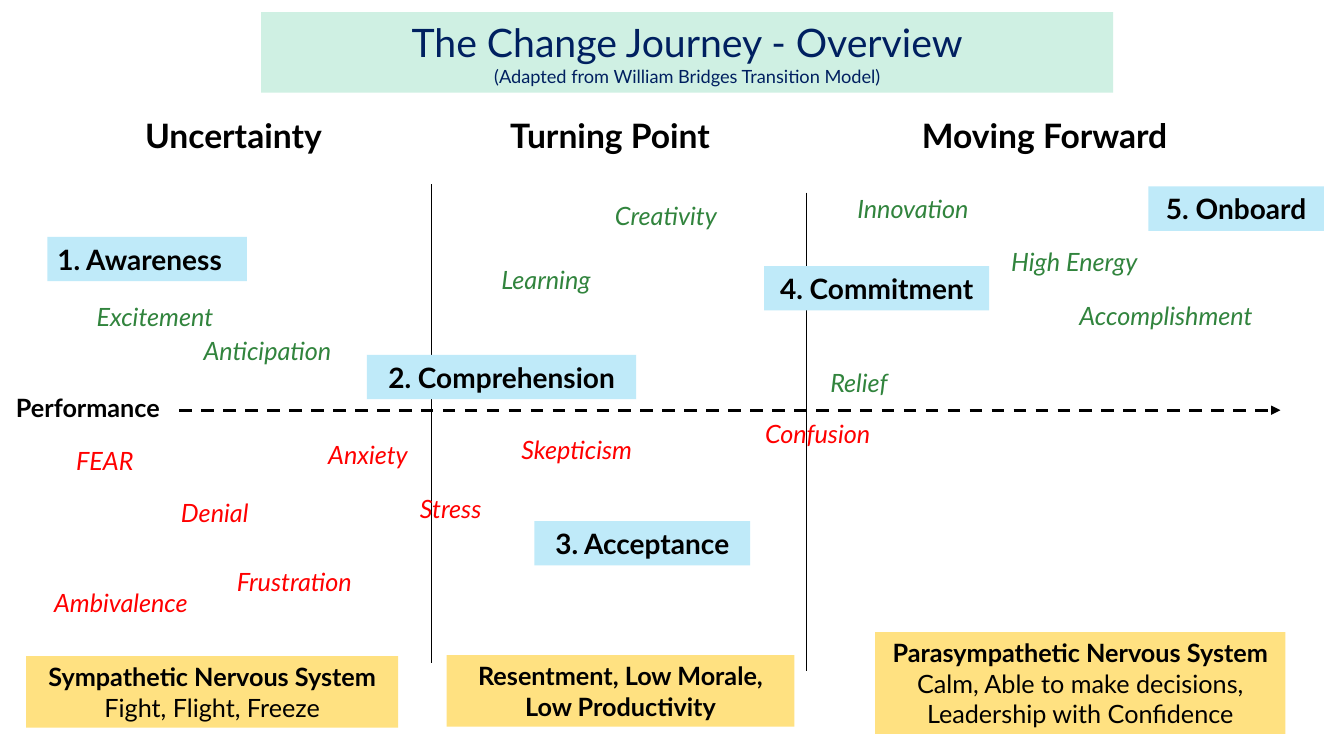
from lxml import etree
from pptx import Presentation
from pptx.dml.color import RGBColor
from pptx.enum.dml import MSO_LINE
from pptx.enum.shapes import MSO_CONNECTOR, MSO_SHAPE
from pptx.enum.text import MSO_ANCHOR, MSO_AUTO_SIZE, PP_ALIGN
from pptx.oxml.ns import qn
from pptx.util import Emu, Pt

PX = 9144  # 100 px to the inch
FONT = "Lato"
TITLE_ONLY = 5

BLACK = RGBColor(0x00, 0x00, 0x00)
NAVY = RGBColor(0x00, 0x20, 0x60)
GREEN = RGBColor(0x31, 0x84, 0x3D)
RED = RGBColor(0xFF, 0x00, 0x00)
MINT = RGBColor(0xCF, 0xF0, 0xE3)
SKY = RGBColor(0xBF, 0xEA, 0xF9)
YELLOW = RGBColor(0xFF, 0xE1, 0x81)

LEFT, CENTER = PP_ALIGN.LEFT, PP_ALIGN.CENTER
MIDDLE, TOP = MSO_ANCHOR.MIDDLE, MSO_ANCHOR.TOP
NO_AUTOFIT = MSO_AUTO_SIZE.NONE
RECTANGLE = MSO_SHAPE.RECTANGLE
STRAIGHT = MSO_CONNECTOR.STRAIGHT
DASH = MSO_LINE.DASH

HEADING = {"size": Pt(24), "bold": True}
STAGE = {"size": Pt(20), "bold": True}
STRONG = {"size": Pt(18), "bold": True}
PLAIN = {"size": Pt(18), "bold": False}
FEELING = {"size": Pt(18), "italic": True}


class SlideBuilder:
    def __init__(self, page):
        self.page = page

    def lengths(self, *values):
        return [Emu(value * PX) for value in values]

    def add_span(self, para, text, style, color):
        span = para.add_run()
        span.text = text
        for name, value in {"name": FONT, **style}.items():
            setattr(span.font, name, value)
        span.font.color.rgb = color

    def frame(self, box, anchor):
        settings = {"word_wrap": True, "auto_size": NO_AUTOFIT, "vertical_anchor": anchor}
        for name, value in settings.items():
            setattr(box.text_frame, name, value)
        return box.text_frame

    def title(self, bounds, heading, subheading):
        box = self.page.shapes.title
        box.left, box.top, box.width, box.height = self.lengths(*bounds)
        box.fill.solid()
        box.fill.fore_color.rgb = MINT
        para = self.frame(box, MIDDLE).paragraphs[0]
        para.alignment = CENTER
        self.add_span(para, heading, {"size": Pt(28)}, NAVY)
        para.add_line_break()
        self.add_span(para, subheading, {"size": Pt(13)}, NAVY)

    def label(self, bounds, text, style, color=BLACK, align=CENTER):
        box = self.page.shapes.add_textbox(*self.lengths(*bounds))
        para = self.frame(box, TOP).paragraphs[0]
        para.alignment = align
        self.add_span(para, text, style, color)

    def panel(self, bounds, fill, lines, align=CENTER):
        box = self.page.shapes.add_shape(RECTANGLE, *self.lengths(*bounds))
        box.shadow.inherit = False
        box.fill.solid()
        box.fill.fore_color.rgb = fill
        box.line.fill.background()
        frame = self.frame(box, MIDDLE)
        for index, (text, style) in enumerate(lines):
            para = frame.add_paragraph() if index else frame.paragraphs[0]
            para.alignment = align
            self.add_span(para, text, style, BLACK)

    def line(self, ends, width, dashed_arrow=False):
        connector = self.page.shapes.add_connector(STRAIGHT, *self.lengths(*ends))
        connector.line.color.rgb = BLACK
        connector.line.width = Pt(width)
        properties = connector._element.spPr
        if dashed_arrow:
            connector.line.dash_style = DASH
            etree.SubElement(properties.find(qn("a:ln")), qn("a:tailEnd"), type="triangle")
        etree.SubElement(properties, qn("a:effectLst"))


def main():
    deck = Presentation()
    deck.slide_width, deck.slide_height = Emu(1333 * PX), Emu(750 * PX)
    slide = SlideBuilder(deck.slides.add_slide(deck.slide_layouts[TITLE_ONLY]))

    # Title and phase headings
    slide.title((259, 12, 845, 80), "The Change Journey - Overview",
                "(Adapted from William Bridges Transition Model)")
    for left, width, text, align in [
        (122, 219, "Uncertainty", CENTER),
        (496, 235, "Turning Point", LEFT),
        (895, 282, "Moving Forward", CENTER),
    ]:
        slide.label((left, 109, width, 50), text, HEADING, align=align)

    # Phase dividers and performance axis
    for x, top in [(428, 183), (800, 191)]:
        slide.line((x, top, x, top + 475), 1)
    slide.line((178, 407, 1270, 407), 2.25, dashed_arrow=True)
    slide.label((6, 384, 192, 40), "Performance", STRONG, align=LEFT)

    # Numbered stages
    for left, top, width, text, align in [
        (47, 235, 198, "1. Awareness", LEFT),
        (364, 352, 267, "2. Comprehension", CENTER),
        (530, 517, 214, "3. Acceptance", CENTER),
        (758, 264, 223, "4. Commitment", CENTER),
        (1139, 185, 174, "5. Onboard", CENTER),
    ]:
        slide.panel((left, top, width, 44), SKY, [(text, STAGE)], align)

    # Positive feelings above the axis
    for left, top, width, text, align in [
        (86, 294, 174, "Excitement", LEFT),
        (192, 328, 181, "Anticipation", LEFT),
        (1043, 293, 227, "Accomplishment", CENTER),
        (830, 187, 151, "Innovation", CENTER),
        (466, 257, 151, "Learning", CENTER),
        (585, 194, 151, "Creativity", CENTER),
        (961, 239, 209, "High Energy", CENTER),
        (765, 359, 174, "Relief", CENTER),
    ]:
        slide.label((left, top, width, 40), text, FEELING, GREEN, align)

    # Negative feelings below the axis
    for left, top, width, text in [
        (17, 437, 174, "FEAR"),
        (126, 488, 174, "Denial"),
        (23, 578, 194, "Ambivalence"),
        (205, 557, 174, "Frustration"),
        (360, 484, 174, "Stress"),
        (278, 431, 174, "Anxiety"),
        (724, 410, 174, "Confusion"),
        (485, 426, 174, "Skepticism"),
    ]:
        slide.label((left, top, width, 40), text, FEELING, RED)

    # Outcome of each phase
    slide.panel((26, 651, 369, 71), YELLOW, [
        ("Sympathetic Nervous System", STRONG),
        ("Fight, Flight, Freeze", PLAIN),
    ])
    slide.panel((443, 650, 345, 71), YELLOW, [
        ("Resentment, Low Morale, Low Productivity", STRONG),
    ])
    slide.panel((868, 627, 407, 101), YELLOW, [
        ("Parasympathetic Nervous System", STRONG),
        ("Calm, Able to make decisions, Leadership with Confidence", PLAIN),
    ])

    deck.save("out.pptx")


if __name__ == "__main__":
    main()
